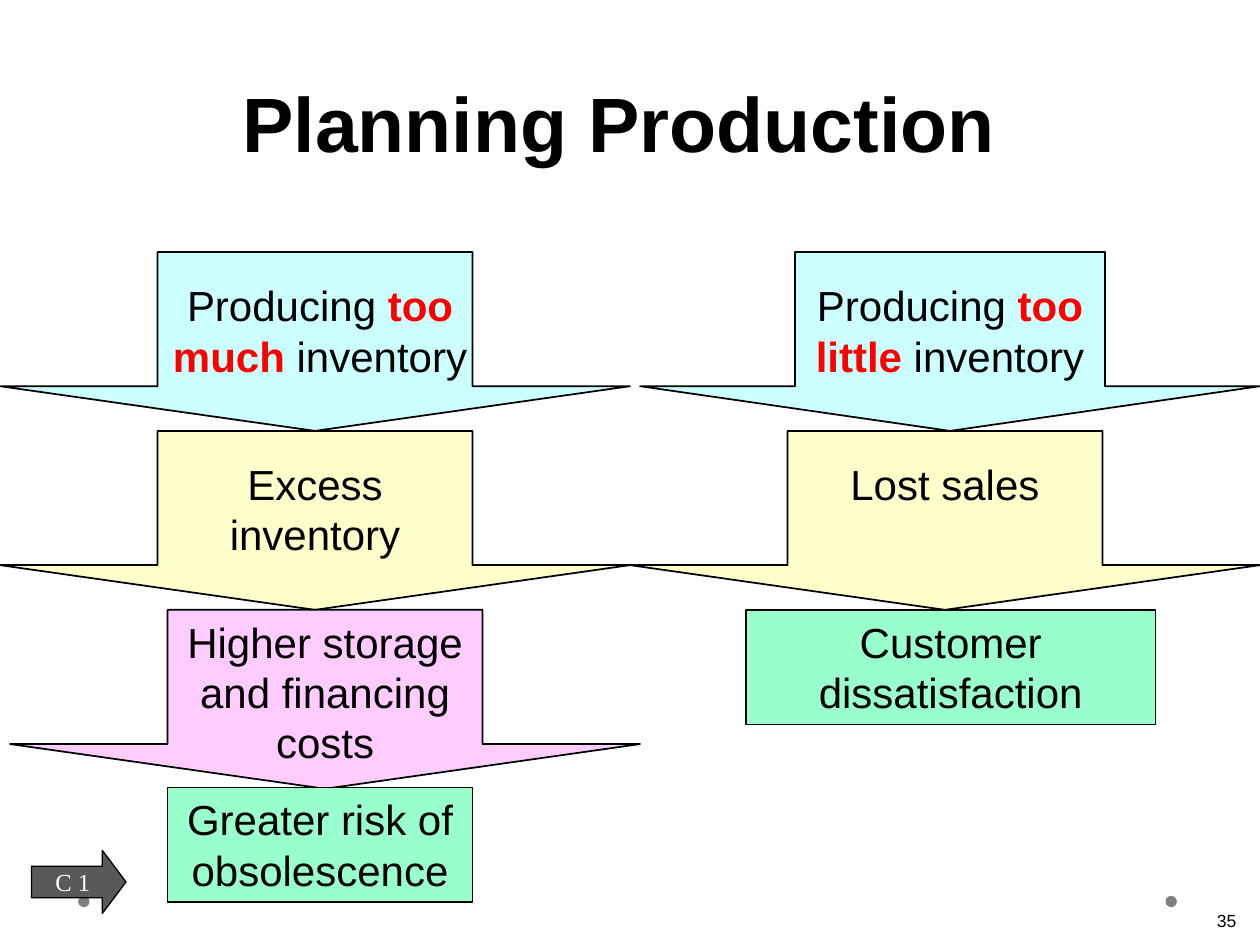
import pptx
import pptx.dml.color
import pptx.enum.shapes
import pptx.enum.text
import pptx.util
from pptx.util import Inches

SHAPE = pptx.enum.shapes.MSO_SHAPE
ALIGN = pptx.enum.text.PP_ALIGN
ANCHOR = pptx.enum.text.MSO_ANCHOR

COLORS = {
    "black": "000000", "white": "FFFFFF", "red": "FF0000",
    "cyan": "CCFFFF", "yellow": "FFFFCC", "pink": "FFCCFF",
    "green": "99FFCC", "gray": "808080", "dark": "595959",
}
TOP, STEP = 2, 1.42
TOO_MUCH = [("Producing ", False), ("too much", True), (" inventory", False)]
TOO_LITTLE = [("Producing ", False), ("too little", True), (" inventory", False)]


def rgb(name):
    return pptx.dml.color.RGBColor.from_string(COLORS[name])


def write(sp, runs, size=24, font="Arial", color="black", bold=False,
          align=ALIGN.CENTER, anchor=ANCHOR.TOP, wrap=True):
    """Fill one paragraph from (text, emphasised) runs; emphasis is bold red."""
    tf = sp.text_frame
    tf.word_wrap = wrap
    tf.vertical_anchor = anchor
    p = tf.paragraphs[0]
    p.alignment = align
    for text, strong in runs:
        r = p.add_run()
        r.text = text
        r.font.name = font
        r.font.size = pptx.util.Pt(size)
        r.font.bold = bold or strong
        r.font.color.rgb = rgb("red" if strong else color)
    return p


def add_shape(shapes, kind, box, fill, line=1):
    sp = shapes.add_shape(kind, *map(Inches, box))
    sp.shadow.inherit = False
    sp.fill.solid()
    sp.fill.fore_color.rgb = rgb(fill)
    if line:
        sp.line.color.rgb = rgb("black")
        sp.line.width = pptx.util.Pt(line)
    else:
        sp.line.fill.background()
    return sp


def add_text(shapes, box, runs, **style):
    return write(shapes.add_textbox(*map(Inches, box)), runs, **style)


def add_step(s, row, left, width, fill, label_box, runs):
    """Group a down arrow in the given row with its label."""
    shapes = s.shapes.add_group_shape().shapes
    sp = add_shape(shapes, SHAPE.DOWN_ARROW,
                   (left, TOP + row * STEP, width, STEP), fill)
    sp.adjustments[0] = 0.5
    sp.adjustments[1] = 0.25
    add_text(shapes, label_box, runs)


def add_result(s, box, text):
    write(add_shape(s.shapes, SHAPE.RECTANGLE, box, "green"), [(text, False)])


def add_objective_tag(s, text):
    sp = add_shape(s.shapes, SHAPE.RIGHT_ARROW, (0.25, 6.75, 0.75, 0.5), "dark", 0.75)
    sp.adjustments[0] = 0.5
    sp.adjustments[1] = 0.375
    write(sp, [(text, False)], size=14, font="Times New Roman", color="white",
          anchor=ANCHOR.MIDDLE, wrap=False)


def main():
    prs = pptx.Presentation()
    prs.slide_width, prs.slide_height = Inches(10), Inches(7.5)
    # Title Only layout would add a placeholder; the blank one has none.
    s = prs.slides.add_slide(prs.slide_layouts[6])

    for left in (9.25, 0.62):
        add_shape(s.shapes, SHAPE.OVAL, (left, 7.11, 0.09, 0.09), "gray", line=0)
    p = add_text(s.shapes, (1, 0.25, 7.83, 1.13), [("Planning Production", False)],
                 size=44, bold=True, anchor=ANCHOR.BOTTOM)
    p.line_spacing = pptx.util.Pt(58)

    add_step(s, 0, 0, 5, "cyan", (1, 2.17, 3.08, 0.91), TOO_MUCH)
    add_step(s, 1, 0, 5, "yellow", (1.25, 3.59, 2.5, 0.9),
             [("Excess inventory", False)])
    add_step(s, 2, 0.08, 5, "pink", (1.33, 4.84, 2.5, 1.3),
             [("Higher storage and financing costs", False)])
    add_result(s, (1.33, 6.25, 2.42, 0.91), "Greater risk of obsolescence")

    add_step(s, 0, 5.08, 4.92, "cyan", (6.31, 2.17, 2.46, 0.91), TOO_LITTLE)
    add_step(s, 1, 5, 5, "yellow", (6.25, 3.59, 2.5, 0.5), [("Lost sales", False)])
    add_result(s, (5.92, 4.84, 3.25, 0.91), "Customer dissatisfaction")

    add_text(s.shapes, (9.33, 7.17, 0.58, 0.25), [("35", False)],
             size=10, align=ALIGN.RIGHT)
    add_objective_tag(s, "C 1")
    prs.save("out.pptx")


if __name__ == "__main__":
    main()
